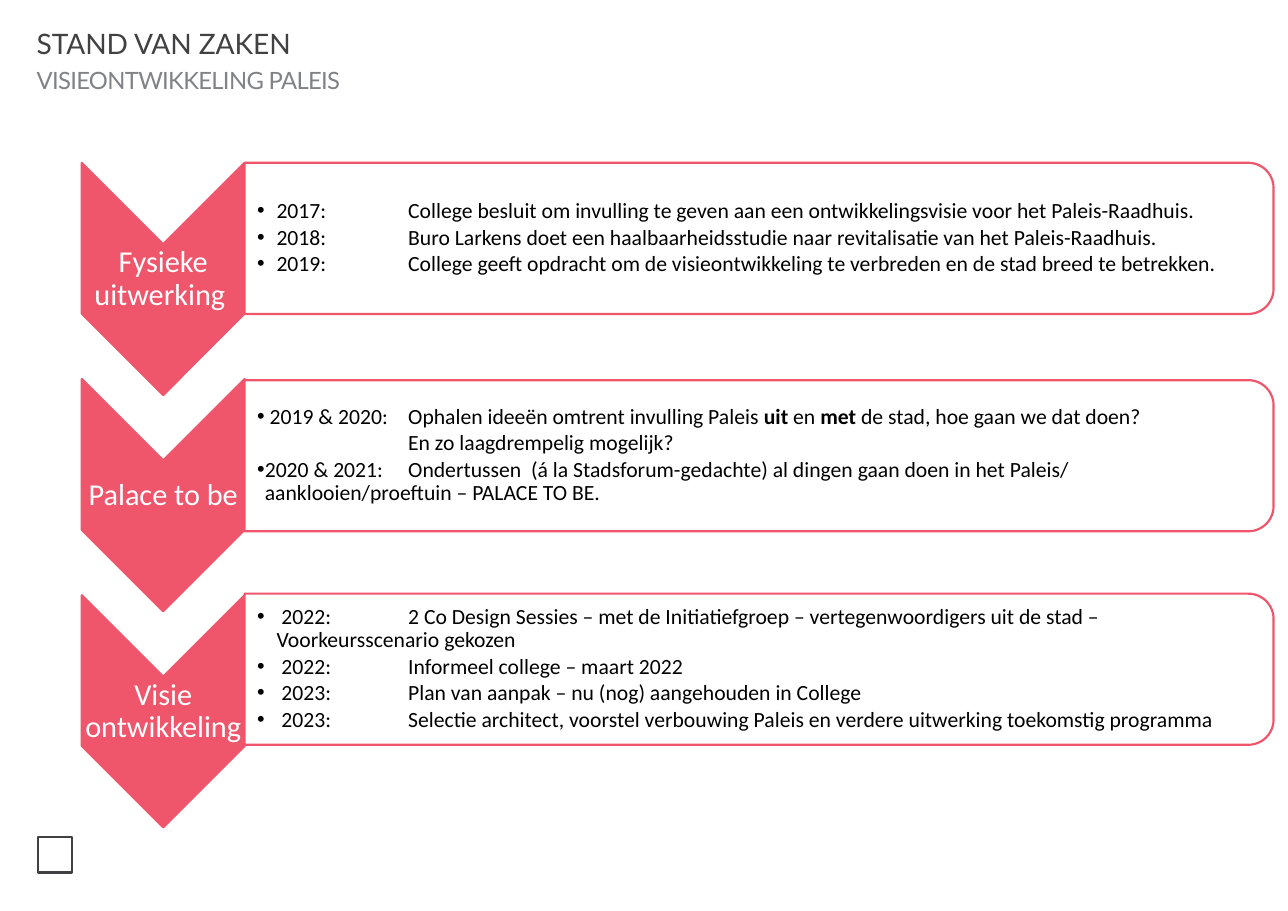
from lxml.etree import SubElement
from pptx import Presentation
from pptx.dml.color import RGBColor
from pptx.enum.shapes import MSO_SHAPE as SHAPE
from pptx.enum.text import MSO_ANCHOR as ANCHOR, PP_ALIGN as ALIGN
from pptx.oxml.ns import qn
from pptx.util import Inches, Pt

A3_WIDTH, A3_HEIGHT = 420 / 25.4, 297 / 25.4
COLORS = {"accent": "EF556B", "dark": "414042", "grey": "808285",
          "white": "FFFFFF", "black": "000000"}
TEXT_COLUMN = 1.94  # from the left edge of the text to the descriptions

# Phase: label, box top, hanging indent, rows of (year, description runs)
PHASES = [
    ("Fysieke uitwerking ", 2.09, 0.25, [
        ("2017:", ["College besluit om invulling te geven aan een ontwikkelingsvisie voor het Paleis-Raadhuis."]),
        ("2018:", ["Buro Larkens doet een haalbaarheidsstudie naar revitalisatie van het Paleis-Raadhuis."]),
        ("2019:", ["College geeft opdracht om de visieontwikkeling te verbreden en de stad breed te betrekken."]),
    ]),
    ("Palace to be", 4.88, 0.1, [
        (" 2019 & 2020:", ["Ophalen ideeën omtrent invulling Paleis ", "uit", " en ", "met",
                           " de stad, hoe gaan we dat doen?"]),
        (None, ["En zo laagdrempelig mogelijk?"]),
        ("2020 & 2021:", ["Ondertussen  (á la Stadsforum-gedachte) al dingen gaan doen in het Paleis/\v"
                          "aanklooien/proeftuin – PALACE TO BE."]),
    ]),
    ("Visie ontwikkeling", 7.62, 0.25, [
        (" 2022:", ["2 Co Design Sessies – met de Initiatiefgroep – vertegenwoordigers uit de stad –\v"
                    "Voorkeursscenario gekozen"]),
        (" 2022:", ["Informeel college – maart 2022"]),
        (" 2023:", ["Plan van aanpak – nu (nog) aangehouden in College"]),
        (" 2023:", ["Selectie architect, voorstel verbouwing Paleis en verdere uitwerking toekomstig programma"]),
    ]),
]


class Deck:
    def __init__(self, s, font):
        self.s, self.font = s, font

    def shape(self, kind, x, y, w, h, fill, line, weight=2, turned=False):
        """Draw a shape in the given area; turned rotates it by 90 degrees."""
        if turned:
            x, y, w, h = x + (w - h) / 2, y + (h - w) / 2, h, w
        sp = self.s.shapes.add_shape(kind, *map(Inches, (x, y, w, h)))
        sp.rotation = 90 if turned else 0
        sp.shadow.inherit = False
        sp.fill.solid()
        sp.fill.fore_color.rgb = RGBColor.from_string(COLORS[fill])
        sp.line.color.rgb = RGBColor.from_string(COLORS[line])
        sp.line.width = Pt(weight)

    def text_box(self, x, y, w, h, margins, anchor=ANCHOR.MIDDLE):
        tf = self.s.shapes.add_textbox(*map(Inches, (x, y, w, h))).text_frame
        tf.word_wrap = True
        tf.vertical_anchor = anchor
        tf.margin_left, tf.margin_top, tf.margin_right, tf.margin_bottom = map(Inches, margins)
        return tf

    def paragraph(self, tf, first, spacing=0.9, before=0, after=0, align=ALIGN.LEFT):
        p = tf.paragraphs[0] if first else tf.add_paragraph()
        p.line_spacing, p.alignment = spacing, align
        p.space_before, p.space_after = Pt(before), Pt(after)
        return p

    def run(self, p, text, size, color, bold=False, font=None, tracking=0):
        """Add text, with \\v as a line break."""
        for i, part in enumerate(text.split("\v")):
            if i:
                p.add_line_break()
            r = p.add_run()
            r.text = part
            r.font.name, r.font.size, r.font.bold = font or self.font, Pt(size), bold
            r.font.color.rgb = RGBColor.from_string(COLORS[color])
            if tracking:
                r._r.get_or_add_rPr().set("spc", str(tracking))

    def hang(self, p, indent, bullet):
        pPr = p._p.get_or_add_pPr()
        pPr.set("marL", str(Inches(indent)))
        pPr.set("indent", str(-Inches(indent) if bullet else 0))
        if bullet:
            SubElement(pPr, qn("a:buFont"), typeface="Arial")
            SubElement(pPr, qn("a:buChar"), char="•")
            tabs = SubElement(pPr, qn("a:tabLst"))
            SubElement(tabs, qn("a:tab"), pos=str(Inches(TEXT_COLUMN)), algn="l")

    def title(self, lines):
        tf = self.text_box(0.47, 0.25, 8.42, 0.97, (0, 0.09, 0, 0), ANCHOR.TOP)
        for i, (text, size, color, before, tracking) in enumerate(lines):
            p = self.paragraph(tf, i == 0, 1.0, before)
            self.run(p, text, size, color, font="Lato", tracking=tracking)

    def phase(self, chevron_top, label, box_top, indent, rows):
        self.shape(SHAPE.CHEVRON, 1.05, chevron_top, 2.09, 2.98, "accent", "accent", turned=True)
        tf = self.text_box(1.05, chevron_top + 1.05, 2.09, 0.89, (0.02,) * 4)
        self.run(self.paragraph(tf, True, after=9.8, align=ALIGN.CENTER), label, 28, "white")

        self.shape(SHAPE.ROUND_2_SAME_RECTANGLE, 3.14, box_top, 13.21, 1.94,
                   "white", "accent", turned=True)
        tf = self.text_box(3.14, box_top + 0.09, 13.12, 1.75, (0.16, 0.01, 0.01, 0.01))
        for i, (year, runs) in enumerate(rows):
            p = self.paragraph(tf, i == 0, after=3)
            self.hang(p, indent if year else TEXT_COLUMN, bool(year))
            if year:
                self.run(p, year + "\t", 20, "black")
            for j, text in enumerate(runs):
                self.run(p, text, 20, "black", bold=j % 2 == 1)


def main():
    prs = Presentation()
    prs.slide_width, prs.slide_height = Inches(A3_WIDTH), Inches(A3_HEIGHT)
    deck = Deck(prs.slides.add_slide(prs.slide_layouts[6]), "Calibri")
    deck.title([("STAND VAN ZAKEN", 26, "dark", 6.7, -10),
                ("VISIEONTWIKKELING PALEIS", 22, "grey", 4.8, -60)])
    for i, phase in enumerate(PHASES):
        deck.phase(2.09 + i * 2.775, *phase)
    deck.shape(SHAPE.RECTANGLE, 0.49, 10.74, 0.44, 0.46, "white", "dark")
    prs.save("out.pptx")


if __name__ == "__main__":
    main()
